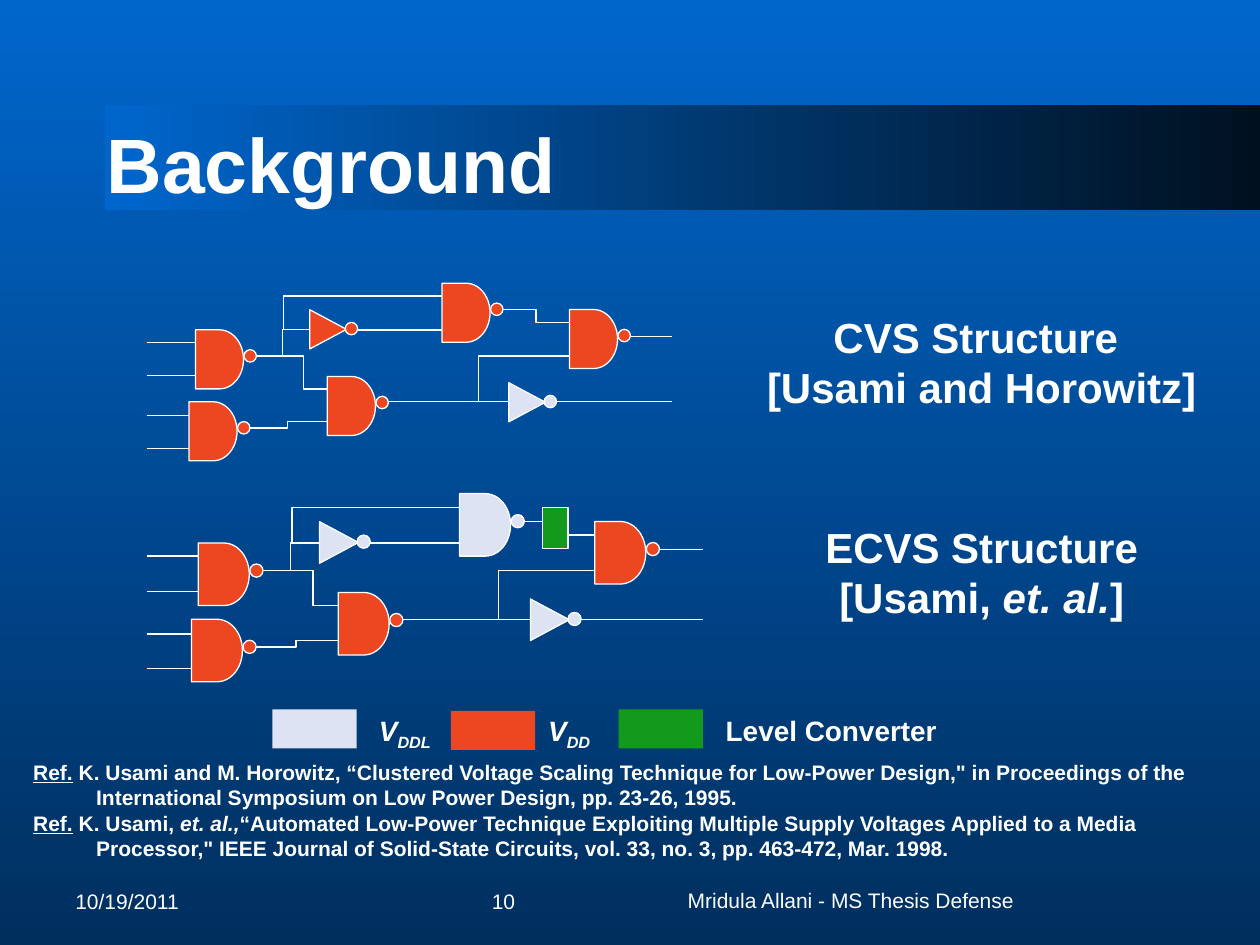
from lxml.etree import SubElement
from pptx import Presentation
from pptx.dml.color import RGBColor
from pptx.enum.shapes import MSO_CONNECTOR as WIRE, MSO_SHAPE as SHAPE
from pptx.enum.text import MSO_ANCHOR as ANCHOR, PP_ALIGN as ALIGN
from pptx.oxml.ns import qn
from pptx.util import Cm, Pt

WHITE, HIGH, LOW, CONVERTER = "FFFFFF", "ED4722", "DDE3F3", "119A1B"

# All lengths are in centimetres; circuit parts are relative to its origin.
NANDS = {"in top": (0.97, 0.94), "in bottom": (0.84, 2.39), "middle": (3.63, 1.88),
         "top": (5.94, 0), "out": (8.51, 0.53)}
INVERTERS = {"inverter top": (3.25, 0.56), "inverter bottom": (7.26, 2.03)}
STRAIGHT_WIRES = [  # y, from x, to x
    (1.19, 0, 0.97), (1.86, 0, 0.97), (2.67, 0, 0.84), (3.33, 0, 0.84),
    (0.94, 4.22, 5.94), (2.39, 6.68, 7.29), (2.39, 8.23, 10.57), (1.07, 9.73, 10.57),
]
BENT_WIRES = [  # from x, from y, to x, to y, bend as a share of the width
    (2.18, 1.47, 3.28, 0.94, 0.5), (2.79, 0.94, 5.94, 0.26, -0.013),
    (2.67, 1.47, 3.63, 2.13, 0.5), (7.16, 0.53, 8.51, 0.79, 0.5),
    (4.85, 2.39, 8.51, 1.47, 0.5), (2.03, 2.92, 3.63, 2.79, 0.5),
]
CIRCUITS = [  # origin, scale, low-voltage gates, level converters
    ((2.97, 5.71), 1, {"inverter bottom"}, []),
    ((2.97, 9.95), 1.06, {"inverter top", "inverter bottom", "top"},
     [(7.52, 0.26, 0.48, 0.79)]),
]

# A run is its text followed by its style letters: b, i, u, s for subscript.
TEXTS = [  # left, top, width, height, size, alignment, anchor, paragraphs
    (1.9, 1.7, 21.59, 3.18, 44, ALIGN.LEFT, ANCHOR.MIDDLE, [[("Background", "b")]]),
    (14.81, 6.15, 9.96, 2.31, 24, ALIGN.CENTER, ANCHOR.TOP,
     [[("CVS Structure ", "b")], [("[Usami and Horowitz]", "b")]]),
    (16.08, 10.39, 7.42, 2.31, 24, ALIGN.CENTER, ANCHOR.TOP,
     [[("ECVS Structure [Usami, ", "b"), ("et. al.", "bi"), ("]", "b")]]),
    (1.27, 17.65, 5.92, 1.02, 12, ALIGN.LEFT, ANCHOR.MIDDLE, [[("10/19/2011", "")]]),
    (7.19, 17.65, 5.92, 1.02, 12, ALIGN.CENTER, ANCHOR.MIDDLE, [[("10", "")]]),
    (13.13, 17.58, 8.05, 1.12, 12, ALIGN.CENTER, ANCHOR.MIDDLE,
     [[("Mridula Allani - MS Thesis Defense", "")]]),
]
REFERENCES = [
    [("Ref.", "bu"),
     (" K. Usami and M. Horowitz, “Clustered Voltage Scaling Technique for Low-Power "
      "Design,\" in Proceedings of the International Symposium on Low Power Design, "
      "pp. 23-26, 1995.", "b")],
    [("Ref.", "bu"), (" K. Usami, ", "b"), ("et. al.,", "bi"),
     ("“Automated Low-Power Technique Exploiting Multiple Supply Voltages Applied to a "
      "Media Processor,\" IEEE Journal of Solid-State Circuits, vol. 33, no. 3, "
      "pp. 463-472, Mar. 1998.", "b")],
]
LEGEND = [  # swatch left, swatch top, colour, label left, label width, label
    (5.49, 14.3, LOW, 7.39, 2.08, [("V", "bi"), ("DDL", "bis")]),
    (9.09, 14.33, HIGH, 10.8, 2.41, [("V", "bi"), ("DD", "bis")]),
    (12.47, 14.3, CONVERTER, 14.38, 5.51, [("Level Converter", "b")]),
]


def rgb(value):
    return RGBColor.from_string(value)


def set_gradient(fill, angle, *colours):
    fill.gradient()
    fill.gradient_angle = angle
    for stop, colour in zip(fill.gradient_stops, colours):
        stop.color.rgb = rgb(colour)


def add_text(page, left, top, width, height, size, align, anchor, paragraphs, hanging=0):
    box = page.shapes.add_textbox(Cm(left), Cm(top), Cm(width), Cm(height))
    frame = box.text_frame
    frame.word_wrap = True
    frame.vertical_anchor = anchor
    for index, runs in enumerate(paragraphs):
        para = frame.add_paragraph() if index else frame.paragraphs[0]
        para.alignment = align
        if hanging:
            properties = para._p.get_or_add_pPr()
            properties.set("marL", str(Cm(hanging)))
            properties.set("indent", str(-Cm(hanging)))
        for words, style in runs:
            span = para.add_run()
            span.text = words
            font = span.font
            font.name, font.size = "Arial", Pt(size)
            font.color.rgb = rgb(WHITE)
            font.bold, font.italic, font.underline = (mark in style for mark in "biu")
            if "s" in style:
                font._element.set("baseline", "-25000")


def add_part(shapes, kind, left, top, width, height, colour, outlined=True):
    part = shapes.add_shape(kind, Cm(left), Cm(top), Cm(width), Cm(height))
    part.shadow.inherit = False
    part.fill.solid()
    part.fill.fore_color.rgb = rgb(colour)
    if outlined:
        part.line.color.rgb = rgb(WHITE)
        part.line.width = Pt(0.75)
    else:
        part.line.fill.background()
    return part


def add_wire(shapes, kind, x1, y1, x2, y2, bend=0.5):
    wire = shapes.add_connector(kind, Cm(x1), Cm(y1), Cm(x2), Cm(y2))
    wire.line.color.rgb = rgb(WHITE)
    wire.line.width = Pt(0.75)
    properties = wire._element.spPr
    SubElement(properties, qn("a:effectLst"))
    if bend != 0.5:
        adjustments = properties.find(qn("a:prstGeom")).get_or_add_avLst()
        SubElement(adjustments, qn("a:gd"), name="adj1", fmla=f"val {round(bend * 100000)}")


def add_circuit(page, origin, scale, low_gates, converters):
    shapes = page.shapes.add_group_shape().shapes

    def place(x, y):
        return origin[0] + x * scale, origin[1] + y * scale

    def draw(kind, x, y, width, height, colour):
        return add_part(shapes, kind, *place(x, y), width * scale, height * scale, colour)

    for y, x1, x2 in STRAIGHT_WIRES:
        add_wire(shapes, WIRE.STRAIGHT, *place(x1, y), *place(x2, y))
    for x1, y1, x2, y2, bend in BENT_WIRES:
        add_wire(shapes, WIRE.ELBOW, *place(x1, y1), *place(x2, y2), bend)
    for name, (x, y) in (NANDS | INVERTERS).items():
        colour = LOW if name in low_gates else HIGH
        if name in NANDS:
            draw(SHAPE.FLOWCHART_DELAY, x, y, 0.97, 1.19, colour)
            bubble = x + 0.98, y + 0.4
        else:
            draw(SHAPE.ISOSCELES_TRIANGLE, x, y, 0.79, 0.74, colour).rotation = 90
            bubble = x + 0.74, y + 0.23
        draw(SHAPE.OVAL, *bubble, 0.25, 0.25, colour)
    for frame in converters:
        draw(SHAPE.RECTANGLE, *frame, CONVERTER)


def main():
    deck = Presentation()
    deck.slide_width, deck.slide_height = Cm(25.4), Cm(19.05)
    page = deck.slides.add_slide(deck.slide_layouts[6])
    set_gradient(page.background.fill, 270, "0066CC", "002F5E")
    banner = add_part(page.shapes, SHAPE.RECTANGLE, 2.12, 2.12, 23.28, 2.12, HIGH, False)
    set_gradient(banner.fill, 0, "0066CC", "00101F")

    for text in TEXTS:
        add_text(page, *text)
    for circuit in CIRCUITS:
        add_circuit(page, *circuit)
    for left, top, colour, label_left, label_width, label in LEGEND:
        add_part(page.shapes, SHAPE.RECTANGLE, left, top, 1.7, 0.79, colour, False)
        add_text(page, label_left, 14.25, label_width, 0.94, 16,
                 ALIGN.LEFT, ANCHOR.TOP, [label])
    add_text(page, 0.42, 15.19, 24.77, 2.31, 12, ALIGN.LEFT, ANCHOR.TOP,
             REFERENCES, hanging=1.27)
    deck.save("out.pptx")


if __name__ == "__main__":
    main()
